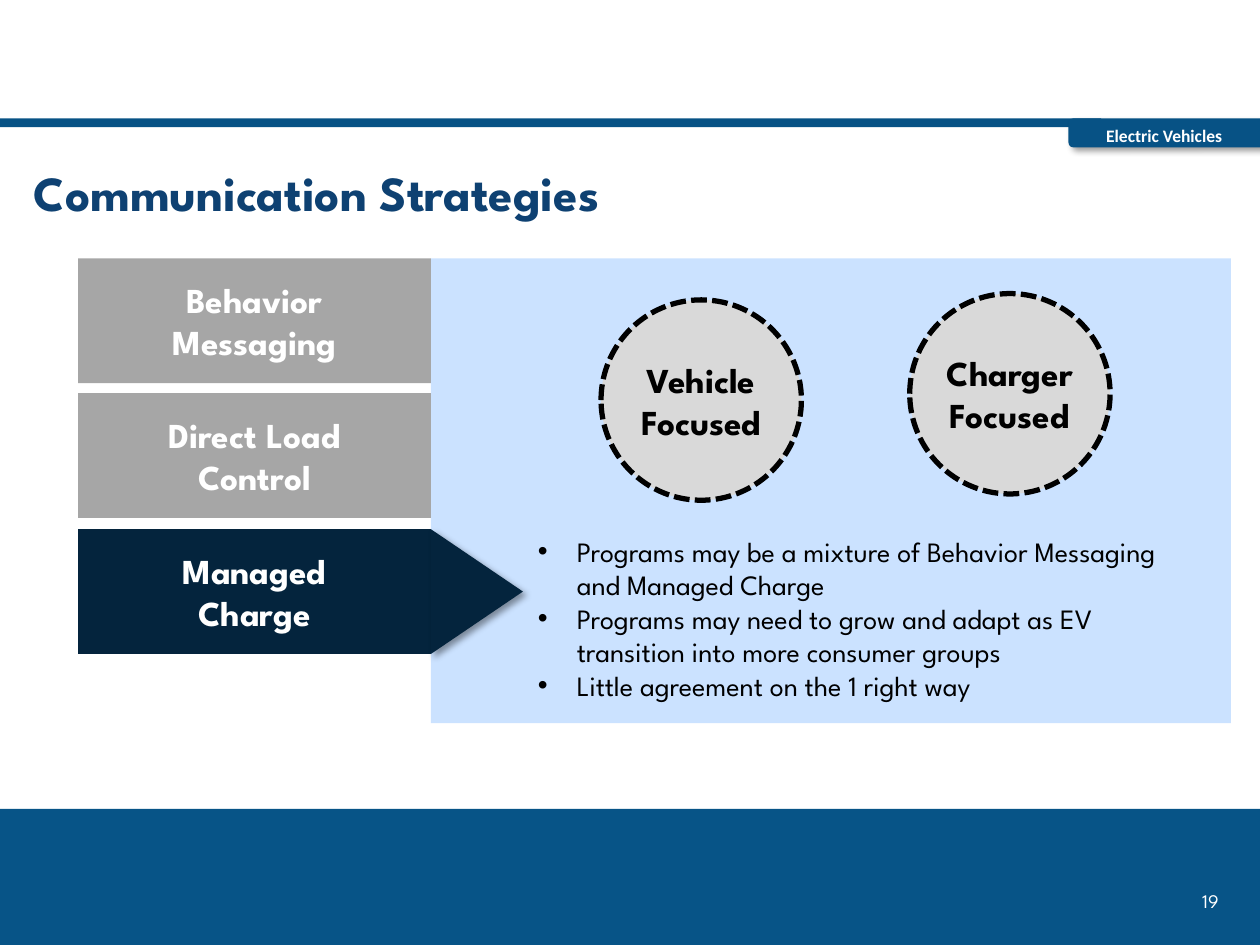
from lxml import etree
from pptx import Presentation
from pptx.dml.color import RGBColor
from pptx.enum.dml import MSO_LINE
from pptx.enum.shapes import MSO_SHAPE
from pptx.enum.text import MSO_ANCHOR, PP_ALIGN
from pptx.oxml import parse_xml
from pptx.oxml.ns import nsdecls, qn
from pptx.util import Inches, Pt

WHITE = RGBColor(0xFF, 0xFF, 0xFF)
BLACK = RGBColor(0x00, 0x00, 0x00)
FOOTER_BLUE = RGBColor(0x07, 0x54, 0x87)
HEADER_BLUE = RGBColor(0x07, 0x52, 0x85)
TITLE_BLUE = RGBColor(0x0E, 0x41, 0x72)
PALE_BLUE = RGBColor(0xCB, 0xE2, 0xFF)
NAVY = RGBColor(0x04, 0x24, 0x3D)
GRAY = RGBColor(0xA6, 0xA6, 0xA6)
LIGHT_GRAY = RGBColor(0xD9, 0xD9, 0xD9)
FONT = "League Spartan"

SHADOW = (
    f'<a:effectLst {nsdecls("a")}>'
    '<a:outerShdw blurRad="50800" dist="38100" dir="2700000" algn="tl" rotWithShape="0">'
    '<a:srgbClr val="000000"><a:alpha val="40000"/></a:srgbClr>'
    '</a:outerShdw></a:effectLst>'
)

prs = Presentation()
prs.slide_width = Inches(10)
prs.slide_height = Inches(7.5)
slide = prs.slides.add_slide(prs.slide_layouts[6])


def add_block(kind, left, top, width, height, color, shadow=False):
    block = slide.shapes.add_shape(
        kind, Inches(left), Inches(top), Inches(width), Inches(height))
    block.fill.solid()
    block.fill.fore_color.rgb = color
    block.line.fill.background()
    block.shadow.inherit = False
    if shadow:
        properties = block.fill._xPr
        properties.replace(properties.find(qn("a:effectLst")), parse_xml(SHADOW))
    return block


def write(shape, lines, size, color, bold=False, align=PP_ALIGN.LEFT,
          font=FONT, side_margin=0.1, bullets=False):
    """Fill a shape with one paragraph per line, centred vertically."""
    frame = shape.text_frame
    frame.word_wrap = True
    frame.vertical_anchor = MSO_ANCHOR.MIDDLE
    frame.margin_left = frame.margin_right = Inches(side_margin)
    for index, line in enumerate(lines):
        paragraph = frame.add_paragraph() if index else frame.paragraphs[0]
        paragraph.alignment = align
        if bullets:
            indents = paragraph._p.get_or_add_pPr()
            indents.set("marL", str(Inches(0.31)))
            indents.set("indent", str(-Inches(0.31)))
            etree.SubElement(indents, qn("a:buFont")).set("typeface", "Arial")
            etree.SubElement(indents, qn("a:buChar")).set("char", "•")
        run = paragraph.add_run()
        run.text = line
        run.font.name = font
        run.font.size = Pt(size)
        run.font.bold = bold
        run.font.color.rgb = color


# Footer, header bar and section tag
add_block(MSO_SHAPE.RECTANGLE, 0, 6.42, 10, 1.08, FOOTER_BLUE)
page_number = slide.shapes.add_textbox(
    Inches(9.33), Inches(6.99), Inches(0.44), Inches(0.32))
write(page_number, ["19"], 11, WHITE, align=PP_ALIGN.RIGHT)

add_block(MSO_SHAPE.RECTANGLE, 0, 0.94, 8.74, 0.07, HEADER_BLUE)
section_tag = add_block(
    MSO_SHAPE.ROUNDED_RECTANGLE, 8.48, 0.94, 1.61, 0.23, HEADER_BLUE, shadow=True)
write(section_tag, ["Electric Vehicles"], 10, WHITE, True, PP_ALIGN.CENTER, "Calibri")
section_tag.text_frame.margin_right = Inches(0.19)
section_tag.text_frame.margin_top = Inches(0.08)
section_tag.text_frame.margin_bottom = Inches(0.04)

title = slide.shapes.add_textbox(Inches(0.17), Inches(1.21), Inches(9.6), Inches(0.62))
write(title, ["Communication Strategies"], 28, TITLE_BLUE, True)

# Strategies, with the active one pointing into the panel
add_block(MSO_SHAPE.RECTANGLE, 3.42, 2.05, 6.35, 3.69, PALE_BLUE)
strategies = [
    (["Behavior Messaging"], 2.05, GRAY),
    (["Direct Load", "Control"], 3.12, GRAY),
    (["Managed Charge"], 4.2, NAVY),
]
for lines, top, color in strategies:
    strategy = add_block(MSO_SHAPE.RECTANGLE, 0.62, top, 2.8, 0.99, color)
    write(strategy, lines, 20, WHITE, True, PP_ALIGN.CENTER, side_margin=0.55)

pointer = add_block(
    MSO_SHAPE.ISOSCELES_TRIANGLE, 3.29, 4.33, 0.99, 0.73, NAVY, shadow=True)
pointer.rotation = 90

# Program focus circles
for focus, left, top in [("Vehicle Focused", 4.77, 2.38), ("Charger Focused", 7.22, 2.33)]:
    circle = add_block(MSO_SHAPE.OVAL, left, top, 1.59, 1.59, LIGHT_GRAY)
    circle.line.color.rgb = BLACK
    circle.line.width = Pt(3)
    circle.line.dash_style = MSO_LINE.SQUARE_DOT
    write(circle, [focus], 20, BLACK, True, PP_ALIGN.CENTER, side_margin=0)

takeaways = slide.shapes.add_textbox(
    Inches(4.17), Inches(4.18), Inches(5.48), Inches(1.45))
write(takeaways, [
    "Programs may be a mixture of Behavior Messaging and Managed Charge",
    "Programs may need to grow and adapt as EV transition into more consumer groups",
    "Little agreement on the 1 right way",
], 16, BLACK, bullets=True)

prs.save("out.pptx")
